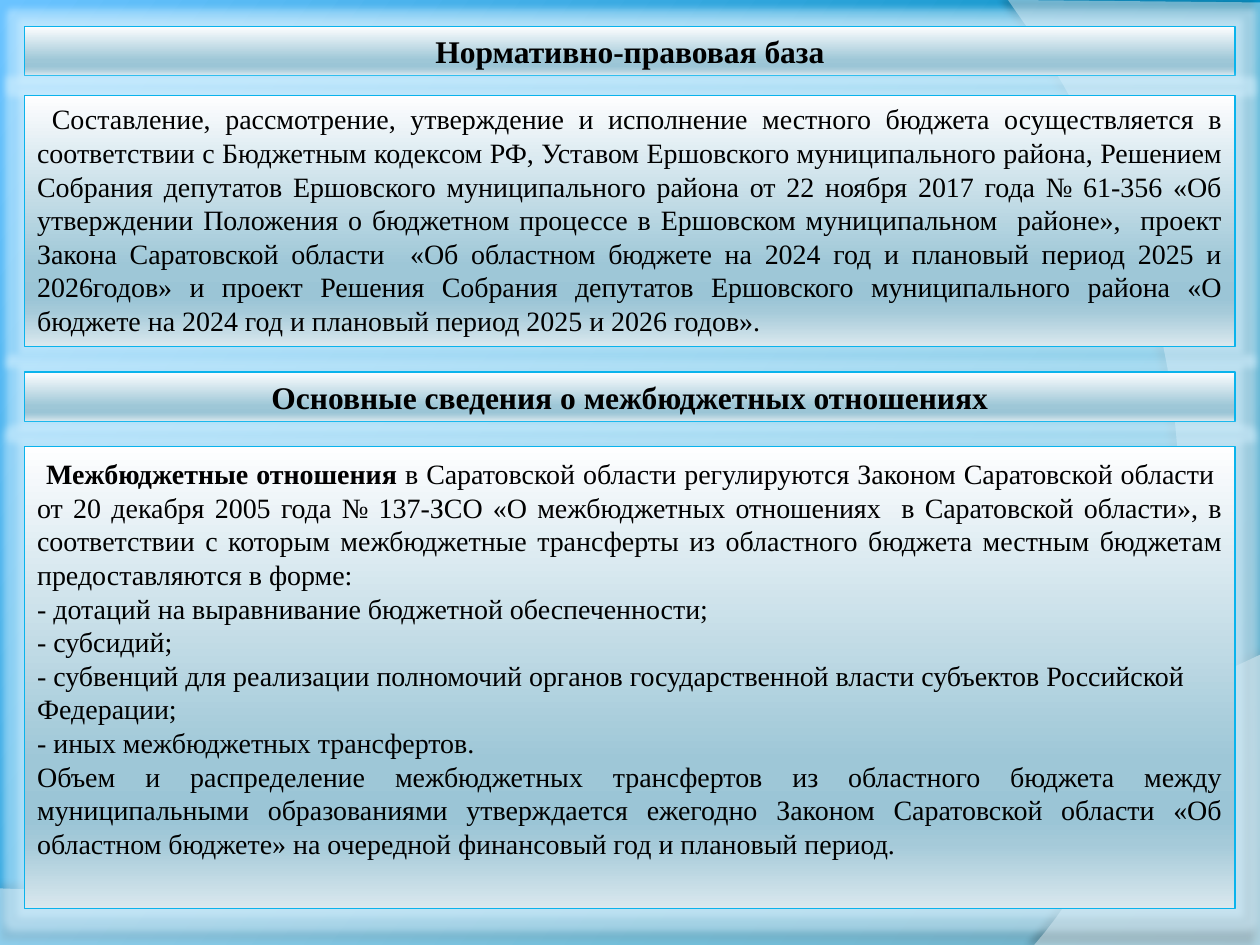
import pptx
import pptx.dml.color
import pptx.enum.shapes
import pptx.enum.text
import pptx.oxml
import pptx.oxml.ns
import pptx.util
from dataclasses import dataclass

Cm = pptx.util.Cm
Pt = pptx.util.Pt
Align = pptx.enum.text.PP_ALIGN
Anchor = pptx.enum.text.MSO_ANCHOR
qn = pptx.oxml.ns.qn


@dataclass(frozen=True)
class Theme:
    """Colours, font and type sizes of the slide."""
    background: tuple = ((0, "0076A1"), (30, "008DC0"), (100, "6AC3FF"))
    panel: tuple = ((0, "FEFEFF"), (68, "9EC7D7"), (81, "9BC5D6"), (86, "A5CAD9"), (100, "DAE8EE"))
    border: str = "0AB3EC"
    glow: str = "D5F1FF"
    wave: str = "FFFFFF"
    text: str = "000000"
    font: str = "Times New Roman"
    heading_size: int = 18
    body_size: int = 16


THEME = Theme()
LEGAL_TEXT = (
    " Составление, рассмотрение, утверждение и исполнение местного бюджета осуществляется в "
    "соответствии с Бюджетным кодексом РФ, Уставом Ершовского муниципального района, Решением "
    "Собрания депутатов Ершовского муниципального района от 22 ноября 2017 года № 61-356 «Об "
    "утверждении Положения о бюджетном процессе в Ершовском муниципальном  районе»,  проект "
    "Закона Саратовской области  «Об областном бюджете на 2024 год и плановый период 2025 и "
    "2026годов» и проект Решения Собрания депутатов Ершовского муниципального района «О "
    "бюджете на 2024 год и плановый период 2025 и 2026 годов».")
RELATIONS_TERM = "Межбюджетные отношения"
RELATIONS_TEXT = (
    " в Саратовской области регулируются Законом Саратовской области  от 20 декабря 2005 года "
    "№ 137-ЗСО «О межбюджетных отношениях  в Саратовской области», в соответствии с которым "
    "межбюджетные трансферты из областного бюджета местным бюджетам предоставляются в форме:")
TRANSFER_FORMS = (
    "- дотаций на выравнивание бюджетной обеспеченности;",
    "- субсидий;",
    "- субвенций для реализации полномочий органов государственной власти субъектов Российской Федерации;",
    "- иных межбюджетных трансфертов.")
VOLUME_TEXT = (
    "Объем и распределение межбюджетных трансфертов из областного бюджета между муниципальными "
    "образованиями утверждается ежегодно Законом Саратовской области «Об областном бюджете» на "
    "очередной финансовый год и плановый период.")


def rgb(value):
    """Return a colour object for a hex string."""
    return pptx.dml.color.RGBColor.from_string(value)


def apply_gradient(fill, element, stops, angle):
    """Fill with a linear gradient running clockwise at the angle."""
    fill.gradient()
    fill.gradient_angle = 360 - angle
    stop_list = element.find(".//" + qn("a:gsLst"))
    stop_list.clear()
    for position, colour in stops:
        stop = stop_list.makeelement(qn("a:gs"), {"pos": str(position * 1000)})
        stop.append(stop.makeelement(qn("a:srgbClr"), {"val": colour}))
        stop_list.append(stop)


def apply_effect(shape, tag, attributes, colour, opacity):
    """Give the shape one glow or shadow effect."""
    shape.shadow.inherit = False
    effect_list = shape.element.spPr.find(qn("a:effectLst"))
    settings = " ".join(f'{name}="{value}"' for name, value in attributes.items())
    effect_list.append(pptx.oxml.parse_xml(
        f'<a:{tag} {pptx.oxml.ns.nsdecls("a")} {settings}><a:srgbClr val="{colour}">'
        f'<a:alpha val="{opacity * 1000}"/></a:srgbClr></a:{tag}>'))


def curve_points(start, first, second, end, steps=40):
    """Sample a cubic curve after its start point."""
    points = []
    for step in range(1, steps + 1):
        t = step / steps
        weights = ((1 - t) ** 3, 3 * t * (1 - t) ** 2, 3 * t * t * (1 - t), t ** 3)
        points.append(tuple(
            sum(weight * point[axis] for weight, point in zip(weights, (start, first, second, end)))
            for axis in (0, 1)))
    return points


def add_wave(slide, box, corners, curve, opacity, shadow):
    """Draw a translucent wave whose last corner begins the curve."""
    left, top = box
    points = [(Cm(left + x), Cm(top + y)) for x, y in corners + curve_points(corners[-1], *curve)]
    builder = slide.shapes.build_freeform(*points[0], scale=1.0)
    builder.add_line_segments(points[1:], close=True)
    shape = builder.convert_to_shape()
    shape.fill.solid()
    shape.fill.fore_color.rgb = rgb(THEME.wave)
    colour = shape.element.spPr.find(qn("a:solidFill"))[0]
    colour.append(colour.makeelement(qn("a:alpha"), {"val": str(opacity * 1000)}))
    shape.line.fill.background()
    blur, distance, direction, strength = shadow
    apply_effect(shape, "outerShdw", {
        "blurRad": Pt(blur), "dist": Pt(distance), "dir": direction * 60000,
        "algn": "ctr", "rotWithShape": 0}, "000000", strength)


def add_panel(slide, box, paragraphs, anchor, margin):
    """Draw a glowing panel from (alignment, runs) pairs, a run being (text, size, bold)."""
    shape = slide.shapes.add_shape(
        pptx.enum.shapes.MSO_SHAPE.RECTANGLE, *(Cm(length) for length in box))
    apply_gradient(shape.fill, shape.element, THEME.panel, 90)
    shape.line.color.rgb = rgb(THEME.border)
    shape.line.width = Pt(0.75)
    apply_effect(shape, "glow", {"rad": Pt(8)}, THEME.glow, 50)
    frame = shape.text_frame
    frame.word_wrap = True
    frame.vertical_anchor = anchor
    frame.margin_left = frame.margin_right = Cm(margin)
    for index, (alignment, runs) in enumerate(paragraphs):
        paragraph = frame.add_paragraph() if index else frame.paragraphs[0]
        paragraph.alignment = alignment
        for text, size, bold in runs:
            run = paragraph.add_run()
            run.text = text
            run.font.name = THEME.font
            run.font.size = Pt(size)
            run.font.bold = bold
            run.font.color.rgb = rgb(THEME.text)


def add_heading(slide, box, text):
    """Place a centred bold heading bar."""
    add_panel(slide, box, [(Align.CENTER, [(text, THEME.heading_size, True)])], Anchor.MIDDLE, 0.13)


def add_body(slide, box, paragraphs):
    """Place a panel of running text."""
    add_panel(slide, box, paragraphs, Anchor.TOP, 0.25)


def add_background(slide):
    """Paint the backdrop and its two waves."""
    apply_gradient(slide.background.fill, slide.element, THEME.background, 217)
    add_wave(slide, (0, 13.2), [(0, 4.71), (0, 5.85), (25.4, 5.85), (25.4, 0)],
             [(14.2, 5.31), (9.93, 5.05), (0, 4.71)], 45, (4, 3.5, 270, 35))
    add_wave(slide, (20.32, 0), [(5.08, 0.05), (5.08, 19.05), (0.53, 19.05)],
             [(3.43, 15.72), (5.54, 7.62), (0, 0)], 40, (4, 4, 180, 45))


def main():
    """Build and save the slide."""
    presentation = pptx.Presentation()
    presentation.slide_width, presentation.slide_height = Cm(25.4), Cm(19.05)
    slide = presentation.slides.add_slide(presentation.slide_layouts[6])
    size = THEME.body_size
    left, width = 0.5, 24.4
    add_background(slide)
    add_heading(slide, (left, 0.53, width, 1), "Нормативно-правовая база")
    add_body(slide, (left, 1.93, width, 5.05), [(Align.JUSTIFY, [(LEGAL_TEXT, size, False)])])
    add_heading(slide, (left, 7.5, width, 1), "Основные сведения о межбюджетных отношениях")
    relations = [(" ", THEME.heading_size, False), (RELATIONS_TERM, size, True), (RELATIONS_TEXT, size, False)]
    forms = [(Align.LEFT, [(text, size, False)]) for text in TRANSFER_FORMS]
    add_body(slide, (left, 9, width, 9.32), [
        (Align.JUSTIFY, relations), *forms, (Align.JUSTIFY, [(VOLUME_TEXT, size, False)])])
    presentation.save("out.pptx")


if __name__ == "__main__":
    main()
